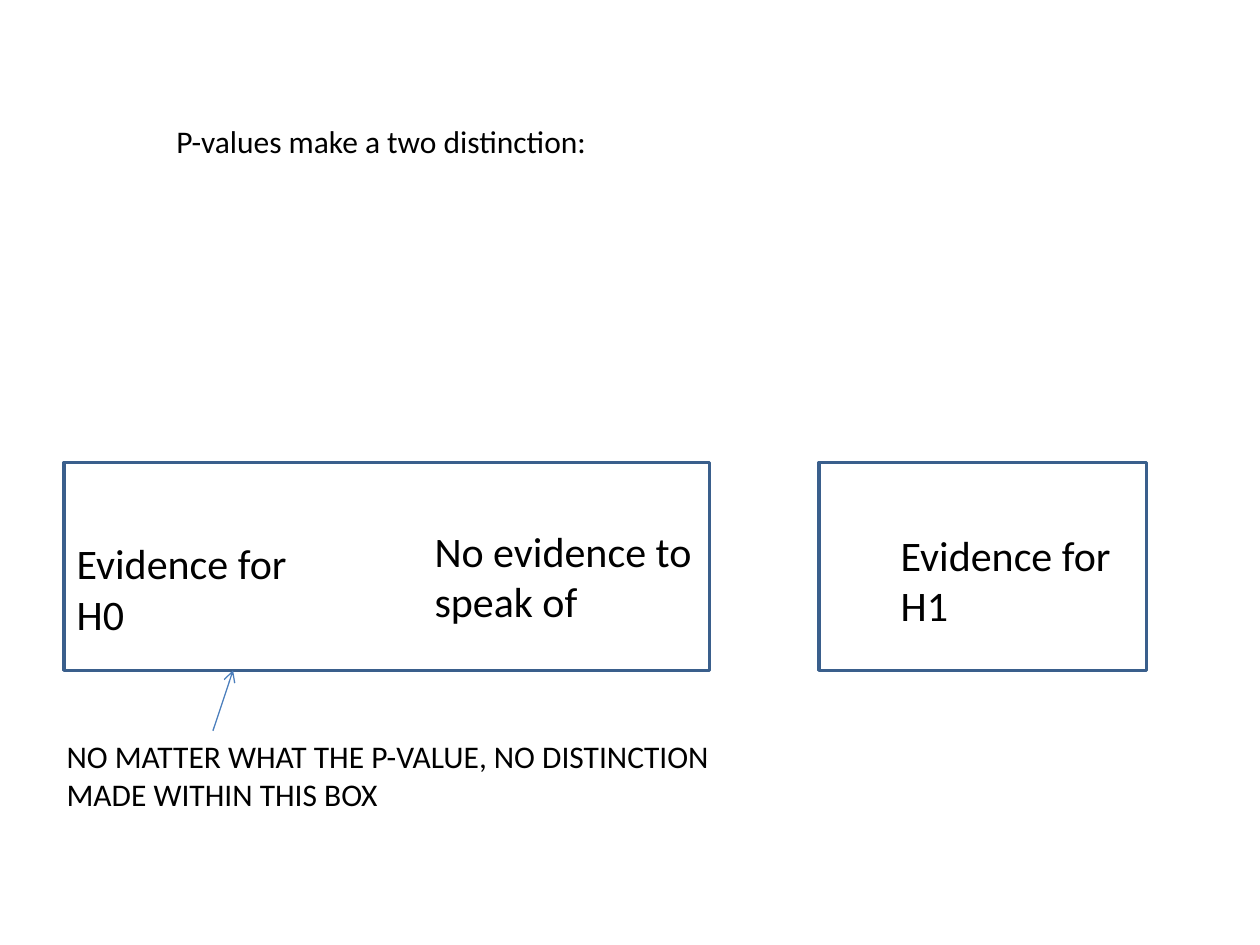
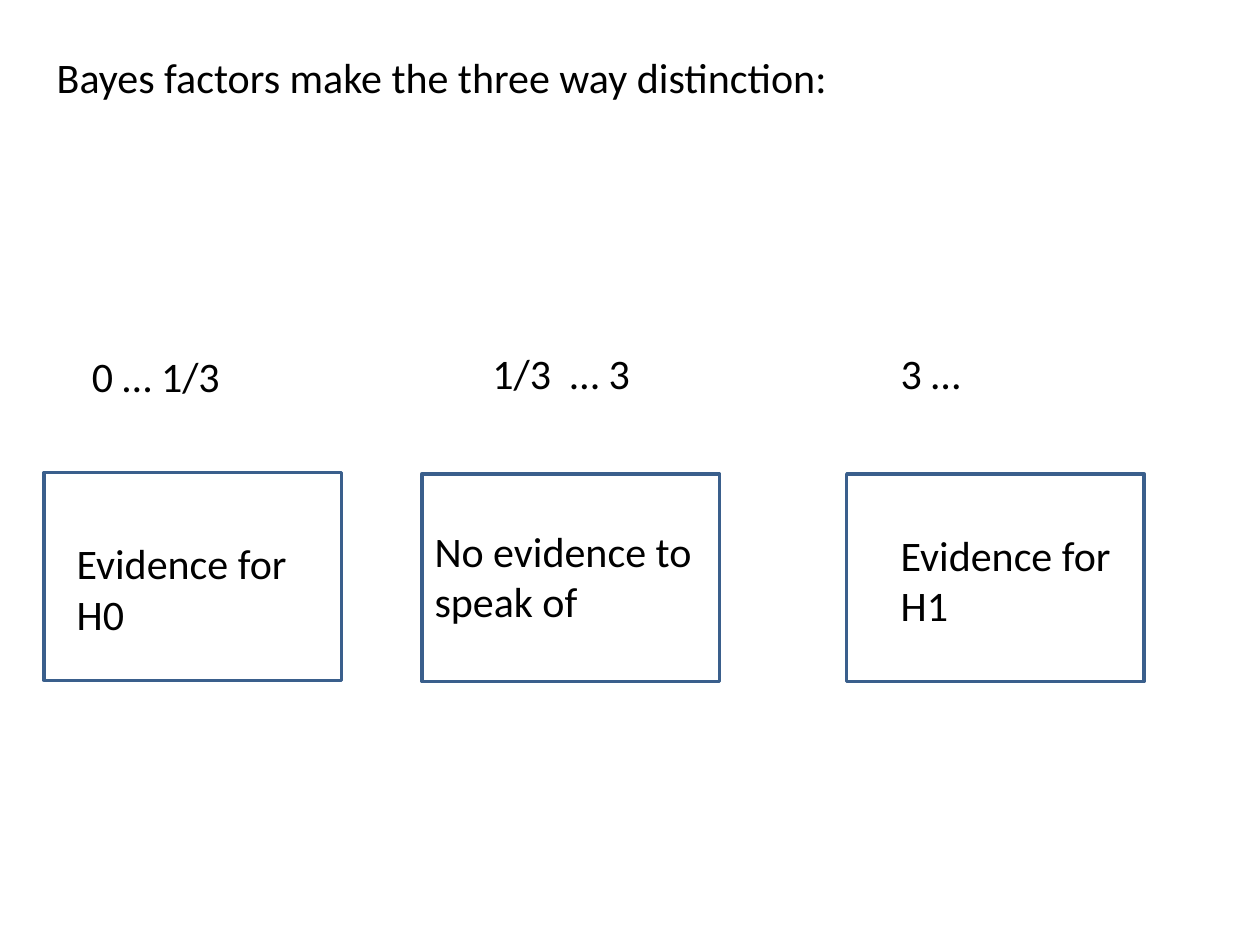
from pptx import Presentation
from pptx.dml.color import RGBColor
from pptx.enum.shapes import MSO_CONNECTOR, MSO_SHAPE
from pptx.enum.text import MSO_ANCHOR, MSO_AUTO_SIZE, PP_ALIGN
from pptx.oxml.ns import qn
from pptx.util import Inches, Pt
from lxml.etree import SubElement

BLACK = RGBColor(0x00, 0x00, 0x00)
EDGE = RGBColor(0x3A, 0x5F, 0x8C)
ARROW = RGBColor(0x4B, 0x7E, 0xBC)

LARGE, SMALL = Pt(24), Pt(18)
FRAME = {"word_wrap": True, "auto_size": MSO_AUTO_SIZE.NONE,
         "vertical_anchor": MSO_ANCHOR.TOP}
FONT = {"name": "Calibri", "bold": False}

# Verdict labels shared by both slides: text, left, top, width
VERDICTS = [
    ("No evidence to speak of", 3.35, 4.12, 2.68),
    ("Evidence for H0", 0.51, 4.22, 2.05),
    ("Evidence for H1", 7.05, 4.15, 2.05),
]
BOX_HIGH = 1.65


def apply(target, values):
    for name, value in values.items():
        setattr(target, name, value)


def place(shape, left, top, width, height):
    apply(shape, {"left": Inches(left), "top": Inches(top),
                  "width": Inches(width), "height": Inches(height)})


def write(shape, text, size):
    frame = shape.text_frame
    frame.text = text
    apply(frame, FRAME)
    para = frame.paragraphs[0]
    para.alignment = PP_ALIGN.LEFT
    font = para.runs[0].font
    apply(font, FONT | {"size": size})
    font.color.rgb = BLACK


def add_label(slide, text, left, top, width, height, size=LARGE):
    label = slide.shapes.add_textbox(0, 0, 0, 0)
    place(label, left, top, width, height)
    write(label, text, size)


def add_box(slide, left, top, width):
    box = slide.shapes.add_shape(
        MSO_SHAPE.RECTANGLE, Inches(left), Inches(top),
        Inches(width), Inches(BOX_HIGH))
    box.shadow.inherit = False
    box.fill.background()
    box.line.color.rgb = EDGE
    box.line.width = Pt(2)


def add_arrow(slide, start, end):
    points = [Inches(n) for n in (*start, *end)]
    arrow = slide.shapes.add_connector(MSO_CONNECTOR.STRAIGHT, *points)
    arrow.line.color.rgb = ARROW
    arrow.line.width = Pt(0.75)
    props = arrow._element.spPr
    SubElement(props.find(qn("a:ln")), qn("a:tailEnd"), type="arrow")
    SubElement(props, qn("a:effectLst"))


def add_slide(deck, title, spot, size):
    """Start a slide with its title and the three verdicts."""
    slide = deck.slides.add_slide(deck.slide_layouts[5])
    place(slide.shapes.title, *spot)
    write(slide.shapes.title, title, size)
    for text, left, top, width in VERDICTS:
        add_label(slide, text, left, top, width, 0.9)
    return slide


def show_pvalues(deck):
    slide = add_slide(deck, "P-values make a two distinction:",
                      (1.3, 0.92, 6.85, 0.4), SMALL)
    # One wide box for two verdicts, one for the third
    for left, width in [(0.51, 5.12), (6.5, 2.6)]:
        add_box(slide, left, 3.67, width)
    # Remark on the wide box
    add_label(slide, "NO MATTER WHAT THE P-VALUE, NO DISTINCTION "
              "MADE WITHIN THIS BOX", 0.43, 5.8, 5.59, 0.71, SMALL)
    add_arrow(slide, (1.69, 5.8), (1.85, 5.32))


def show_bayes(deck):
    slide = add_slide(deck, "Bayes factors make the three way distinction:",
                      (0.35, 0.36, 8.73, 0.5), LARGE)
    # One box for each verdict
    for left, top in [(0.35, 3.75), (3.35, 3.76), (6.72, 3.76)]:
        add_box(slide, left, top, 2.36)
    # Range of the Bayes factor above each box
    for text, left, top in [("0 … 1/3", 0.63, 2.73),
                            ("1/3  … 3", 3.81, 2.71),
                            ("3 …", 7.05, 2.71)]:
        add_label(slide, text, left, top, 1.81, 0.5)


def main():
    deck = Presentation()
    deck.slide_width, deck.slide_height = Inches(10), Inches(7.5)
    show_pvalues(deck)
    show_bayes(deck)
    deck.save("out.pptx")


if __name__ == "__main__":
    main()
